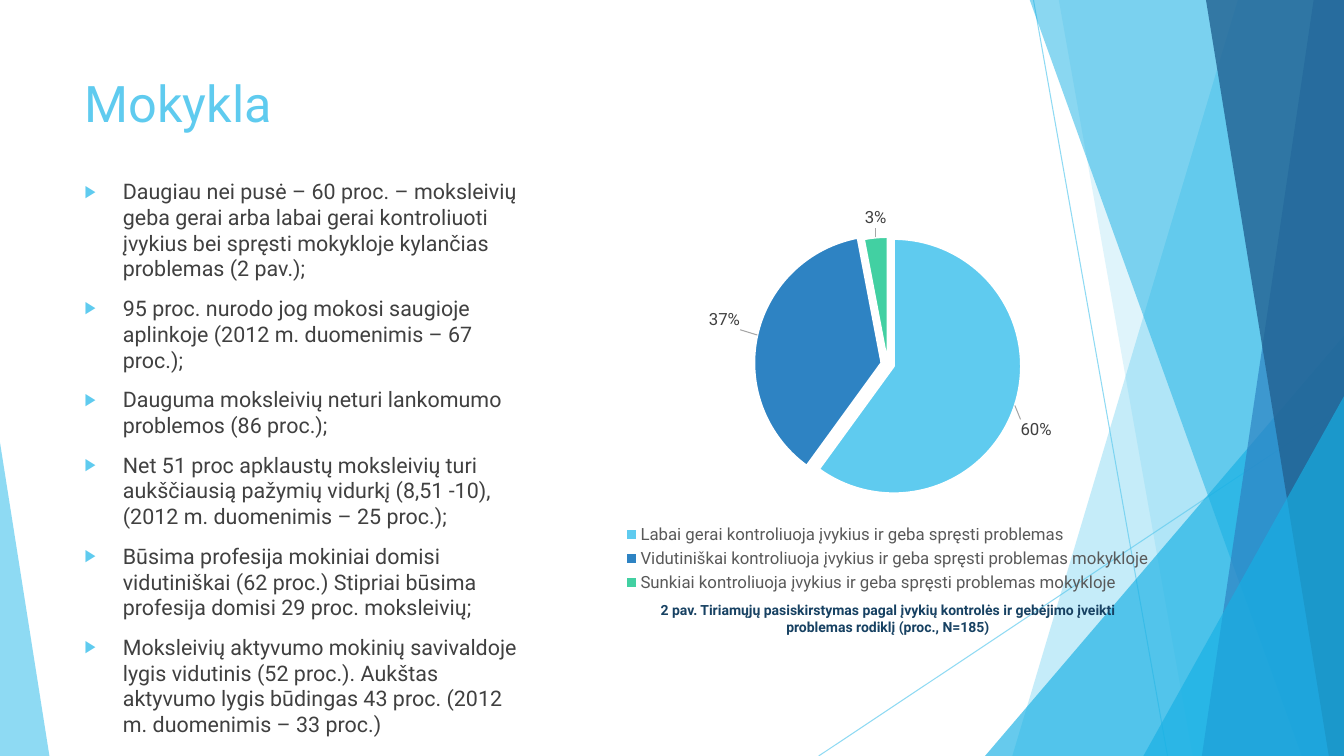
from lxml.etree import SubElement
from pptx import Presentation
from pptx.chart.data import CategoryChartData
from pptx.dml.color import RGBColor
from pptx.enum.chart import XL_CHART_TYPE, XL_LABEL_POSITION as LABEL_POS, XL_LEGEND_POSITION as LEGEND_POS
from pptx.enum.shapes import MSO_CONNECTOR, MSO_SHAPE
from pptx.enum.text import MSO_ANCHOR, MSO_AUTO_SIZE, PP_ALIGN
from pptx.oxml import parse_xml
from pptx.oxml.ns import nsdecls, qn
from pptx.util import Pt

SCALE = 9144  # EMU per px, 100 px to the inch
FONT = "Roboto"
SKY, CYAN, BLUE, NAVY = "5FCBEF", "17B0E4", "2E83C3", "226292"

LINES = [(1025, 0, 1158, 750), (1333, 403, 812, 750)]
FINDINGS = [
    "Daugiau nei pusė – 60 proc. – moksleivių geba gerai arba labai gerai kontroliuoti "
    "įvykius bei spręsti mokykloje kylančias problemas (2 pav.);",
    "95 proc. nurodo jog mokosi saugioje aplinkoje (2012 m. duomenimis – 67 proc.);",
    "Dauguma moksleivių neturi lankomumo problemos (86 proc.);",
    "Net 51 proc apklaustų moksleivių turi aukščiausią pažymių vidurkį (8,51 -10), "
    "(2012 m. duomenimis – 25 proc.);",
    "Būsima profesija mokiniai domisi vidutiniškai (62 proc.) Stipriai būsima profesija "
    "domisi 29 proc. moksleivių;",
    "Moksleivių aktyvumo mokinių savivaldoje lygis vidutinis (52 proc.). Aukštas aktyvumo "
    "lygis būdingas 43 proc. (2012 m. duomenimis – 33 proc.)",
]
CAPTION = ("2 pav. Tiriamųjų pasiskirstymas pagal įvykių kontrolės ir gebėjimo įveikti "
           "problemas rodiklį (proc., N=185)")
# Category, value, colour, explosion, label shift as a share of the chart
SLICES = [
    ("Labai gerai kontroliuoja įvykius ir geba spręsti problemas", 60, SKY, 5, (0.0, 0.03)),
    ("Vidutiniškai kontroliuoja įvykius ir geba spręsti problemas mokykloje", 37, BLUE, 5,
     (-0.02, -0.01)),
    ("Sunkiai kontroliuoja įvykius ir geba spręsti problemas mokykloje", 3, "42D0A2", 0,
     (0.02, -0.01)),
]


def px(*lengths):
    return [length * SCALE for length in lengths]


def rgb(color):
    return RGBColor.from_string(color)


def set_opacity(shape, percent):
    for color in shape._element.spPr.iter(qn("a:srgbClr")):
        SubElement(color, qn("a:alpha"), val=str(percent * 1000))


def format_font(font, size, color, **extras):
    for name, value in {"name": FONT, "size": Pt(size), **extras}.items():
        setattr(font, name, value)
    font.color.rgb = rgb(color)


def style_facet(shape, color, opacity):
    shape.shadow.inherit = False
    shape.fill.solid()
    shape.fill.fore_color.rgb = rgb(color)
    shape.line.fill.background()
    set_opacity(shape, opacity)


def add_line(shapes, ends):
    line = shapes.add_connector(MSO_CONNECTOR.STRAIGHT, *px(*ends))
    line.line.color.rgb = rgb(SKY)
    line.line.width = Pt(0.75)
    set_opacity(line, 70)
    SubElement(line._element.spPr, qn("a:effectLst"))


def add_band(shapes, top, bottom, color, opacity):
    """Draw a full-height band between the x pairs of its top and bottom edges."""
    corners = [(x, -1) for x in top] + [(x, 750) for x in bottom]
    builder = shapes.build_freeform(*corners[0], scale=SCALE)
    builder.add_line_segments(corners[1:])
    style_facet(builder.convert_to_shape(), color, opacity)


def add_triangle(shapes, box, apex, color, opacity):
    triangle = shapes.add_shape(MSO_SHAPE.ISOSCELES_TRIANGLE, *px(*box))
    triangle.adjustments[0] = apex
    style_facet(triangle, color, opacity)


# Facets from back to front
FACETS = [
    (add_band, (1228, 1333), (1333, 1004), SKY, 36),
    (add_band, (1050, 1333), (1333, 1183), SKY, 20),
    (add_triangle, (977, 333, 356, 417), 1, CYAN, 66),
    (add_band, (1021, 1333), (1333, 1291), CYAN, 50),
    (add_band, (1303, 1333), (1333, 1192), BLUE, 70),
    (add_band, (1196, 1333), (1333, 1318), NAVY, 80),
    (add_triangle, (1134, 393, 199, 357), 1, CYAN, 66),
    (add_triangle, (0, 439, 49, 311), 0, SKY, 70),
]


def fill_frame(frame, texts, align, size, color, **extras):
    """Write one paragraph per text, anchored at the top of the frame."""
    settings = {"word_wrap": True, "auto_size": MSO_AUTO_SIZE.NONE,
                "vertical_anchor": MSO_ANCHOR.TOP, "text": "\n".join(texts)}
    for name, value in settings.items():
        setattr(frame, name, value)
    for paragraph in frame.paragraphs:
        paragraph.alignment = align
        format_font(paragraph.runs[0].font, size, color, **extras)


def add_bullet(paragraph):
    paragraph.space_before = Pt(10)
    properties = paragraph._p.get_or_add_pPr()
    properties.set("marL", str(38 * SCALE))
    properties.set("indent", str(-38 * SCALE))
    color = SubElement(properties, qn("a:buClr"))
    SubElement(color, qn("a:srgbClr"), val=SKY)
    SubElement(properties, qn("a:buSzPct"), val="80000")
    SubElement(properties, qn("a:buFont"), typeface=FONT)
    SubElement(properties, qn("a:buChar"), char="▶")


def manual_layout(**values):
    """Build a chart layout element from shares of the chart's size."""
    items = "".join(f'<c:{name} val="{value}"/>' for name, value in values.items())
    return parse_xml(f'<c:layout {nsdecls("c")}><c:manualLayout>{items}</c:manualLayout></c:layout>')


def format_slice(series, index, color, explosion):
    point = series.points[index]
    point.format.fill.solid()
    point.format.fill.fore_color.rgb = rgb(color)
    point.format.line.color.rgb = rgb("FFFFFF")
    point.format.line.width = Pt(1.5)
    slice_xml = series._element.findall(qn("c:dPt"))[index]
    exploded = parse_xml(f'<c:explosion {nsdecls("c")} val="{explosion}"/>')
    slice_xml.find(qn("c:spPr")).addprevious(exploded)
    format_font(point.data_label.font, 12, "404040")
    point.data_label.position = LABEL_POS.OUTSIDE_END


def format_labels(series):
    labels = series.data_labels
    format_font(labels.font, 12, "404040")
    settings = {"show_value": False, "show_percentage": True, "number_format": "0%",
                "number_format_is_linked": False, "position": LABEL_POS.OUTSIDE_END}
    for name, value in settings.items():
        setattr(labels, name, value)
    labels_xml = series._element.find(qn("c:dLbls"))
    for label, (*_, (x, y)) in zip(labels_xml.findall(qn("c:dLbl")), SLICES):
        label.find(qn("c:idx")).addnext(manual_layout(x=x, y=y))
        label.find(qn("c:showVal")).set("val", "0")
        label.find(qn("c:showPercent")).set("val", "1")
    for old in labels_xml.findall(qn("c:showLeaderLines")):
        labels_xml.remove(old)
    SubElement(labels_xml, qn("c:showLeaderLines"), val="1")
    labels_xml.append(parse_xml(
        f'<c:leaderLines {nsdecls("c", "a")}><c:spPr><a:ln w="9525"><a:solidFill>'
        '<a:srgbClr val="A6A6A6"/></a:solidFill></a:ln></c:spPr></c:leaderLines>'))


def add_pie(shapes, box):
    data = CategoryChartData()
    data.categories = [category for category, *_ in SLICES]
    data.add_series("Series 1", [value for _, value, *_ in SLICES])
    chart = shapes.add_chart(XL_CHART_TYPE.PIE, *px(*box), data).chart
    chart.has_title = False
    format_font(chart.font, 10, "000000")
    chart.has_legend = True
    chart.legend.position = LEGEND_POS.BOTTOM
    chart.legend.include_in_layout = False
    format_font(chart.legend.font, 12, "595959")
    plot = chart.plots[0]
    plot.vary_by_categories = True
    series = plot.series[0]
    for index, (_, _, color, explosion, _) in enumerate(SLICES):
        format_slice(series, index, color, explosion)
    format_labels(series)
    plot_area = chart.element.find(".//" + qn("c:plotArea"))
    for old in plot_area.findall(qn("c:layout")):
        plot_area.remove(old)
    plot_area.insert(0, manual_layout(layoutTarget="inner", xMode="edge", yMode="edge",
                                      x=0.27, y=0.11, w=0.46, h=0.63))


def main():
    presentation = Presentation()
    presentation.slide_width, presentation.slide_height = px(1333, 750)
    slide = presentation.slides.add_slide(presentation.slide_layouts[5])
    shapes = slide.shapes
    for ends in LINES:
        add_line(shapes, ends)
    for add_facet, *details in FACETS:
        add_facet(shapes, *details)
    title = shapes.title
    title.left, title.top, title.width, title.height = px(74, 67, 940, 144)
    fill_frame(title.text_frame, ["Mokykla"], PP_ALIGN.LEFT, 36, SKY)
    findings = shapes.add_textbox(*px(74, 172, 458, 495)).text_frame
    fill_frame(findings, FINDINGS, PP_ALIGN.LEFT, 15.3, "404040")
    for paragraph in findings.paragraphs:
        add_bullet(paragraph)
    add_pie(shapes, (598, 191, 565, 401))
    caption = shapes.add_textbox(*px(637, 592, 487, 44)).text_frame
    fill_frame(caption, [CAPTION], PP_ALIGN.CENTER, 10, "174162", bold=True)
    presentation.save("out.pptx")


if __name__ == "__main__":
    main()
